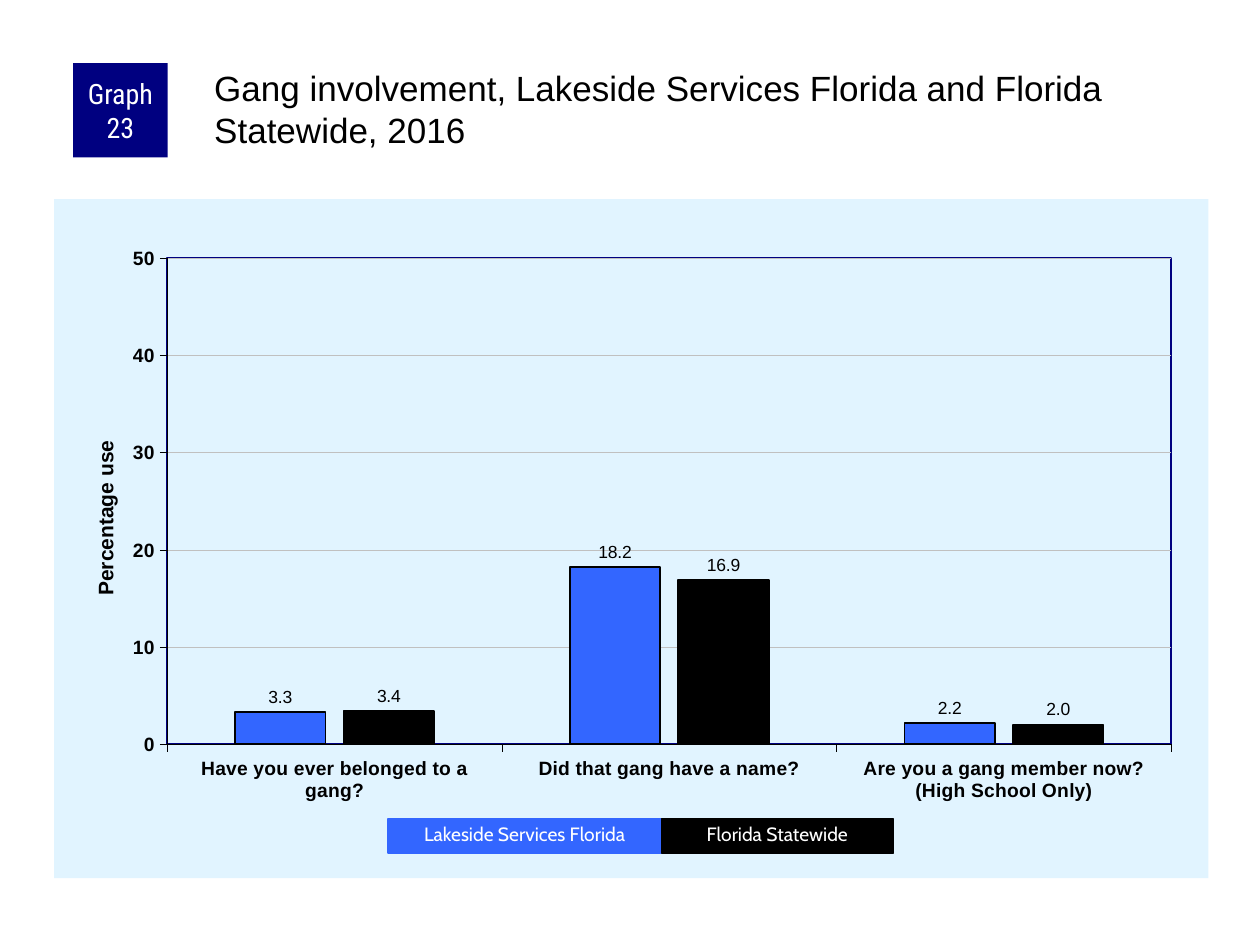
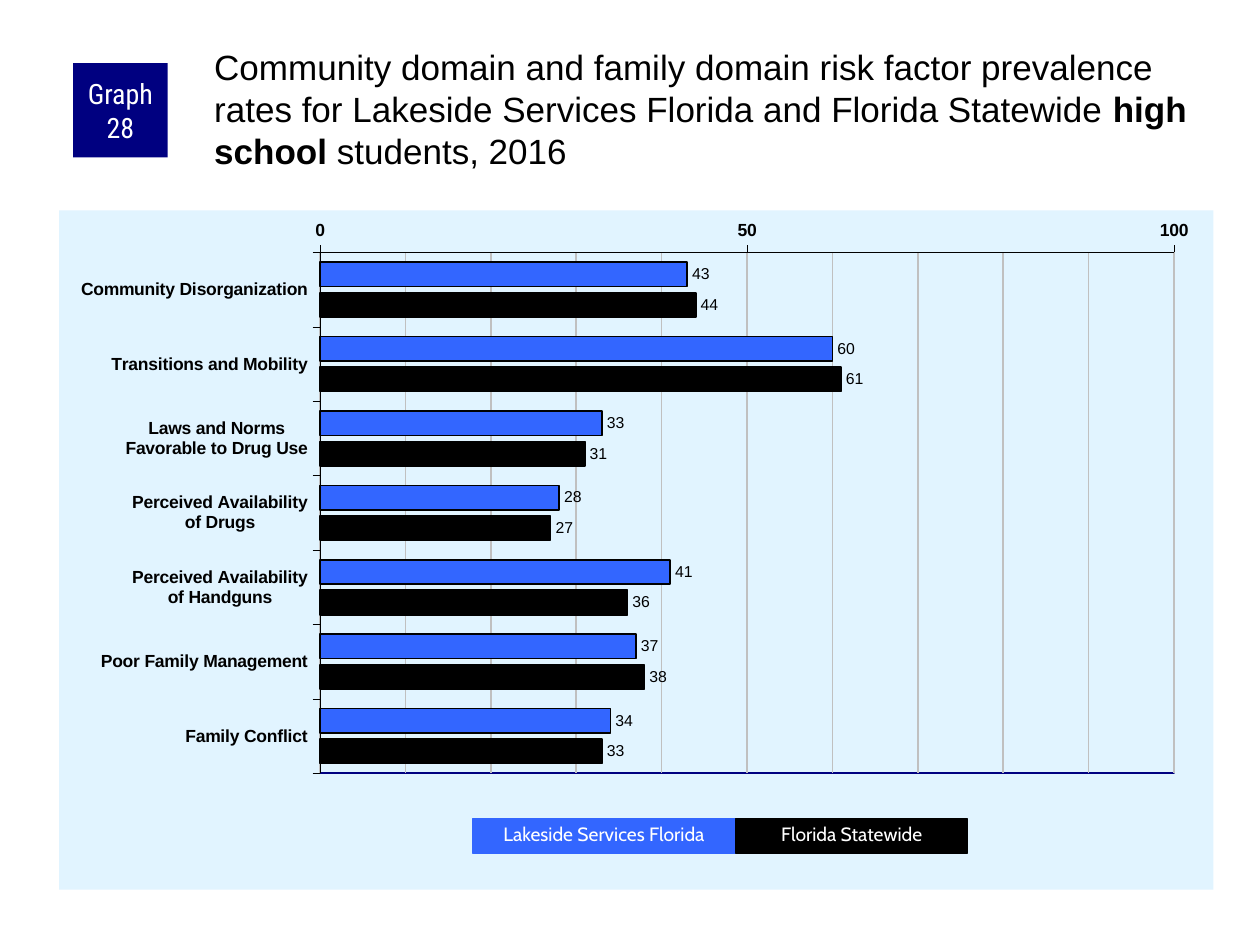
from pptx import Presentation
from pptx.chart.data import CategoryChartData
from pptx.dml.color import RGBColor
from pptx.enum.chart import XL_AXIS_CROSSES, XL_CHART_TYPE, XL_LABEL_POSITION, XL_TICK_MARK
from pptx.enum.shapes import MSO_SHAPE
from pptx.enum.text import MSO_ANCHOR, MSO_AUTO_SIZE, PP_ALIGN
from pptx.oxml import parse_xml
from pptx.oxml.ns import nsdecls, qn
from pptx.util import Inches, Pt

COLUMNS, BARS = XL_CHART_TYPE.COLUMN_CLUSTERED, XL_CHART_TYPE.BAR_CLUSTERED
OUTSIDE, MAXIMUM = XL_TICK_MARK.OUTSIDE, XL_AXIS_CROSSES.MAXIMUM
OUTSIDE_END = XL_LABEL_POSITION.OUTSIDE_END
RECTANGLE, CENTER = MSO_SHAPE.RECTANGLE, PP_ALIGN.CENTER
MIDDLE, TOP = MSO_ANCHOR.MIDDLE, MSO_ANCHOR.TOP
GROW, FIXED = MSO_AUTO_SIZE.SHAPE_TO_FIT_TEXT, MSO_AUTO_SIZE.NONE

COLORS = {"navy": "000080", "blue": "3366FF", "black": "000000",
          "white": "FFFFFF", "panel": "E1F4FF", "grid": "C0C0C0"}
REGIONS = [("Lakeside Services Florida", "blue"), ("Florida Statewide", "black")]
BADGE_FONT = {"name": "Roboto Condensed", "size": Pt(16), "bold": False}
TITLE_FONT = {"name": "Arial", "size": Pt(20)}
LEGEND_FONT = {"name": "Cabin", "size": Pt(11), "bold": False}


def rgb(color):
    return RGBColor.from_string(COLORS[color])


def set_all(target, values):
    for name, value in values.items():
        setattr(target, name, value)


def set_font(font, values, color="black"):
    set_all(font, values)
    font.color.rgb = rgb(color)


def set_line(line, color, width):
    line.color.rgb = rgb(color)
    line.width = Pt(width)


# Chart parts that need XML
def layout_xml(x, y, width=None, height=None):
    places = {"x": x, "y": y}
    target = ""
    if width:
        places.update(w=width, h=height)
        target = '<c:layoutTarget val="inner"/>'
    modes = '<c:xMode val="edge"/><c:yMode val="edge"/>'
    values = "".join(f'<c:{name} val="{value}"/>' for name, value in places.items())
    return parse_xml(f'<c:layout {nsdecls("c")}><c:manualLayout>{target}{modes}{values}'
                     '</c:manualLayout></c:layout>')


def area_xml(fill, line):
    return parse_xml(f'<c:spPr {nsdecls("c", "a")}>{fill}{line}</c:spPr>')


def solid(color):
    return f'<a:solidFill><a:srgbClr val="{COLORS[color]}"/></a:solidFill>'


def line_xml(color, width):
    return f'<a:ln w="{Pt(width)}">{solid(color)}</a:ln>'


def style_areas(chart, plot_place):
    frame = chart.element.find(qn("c:chart"))
    frame.addnext(area_xml(solid("panel"), "<a:ln><a:noFill/></a:ln>"))
    plot_area = frame.find(qn("c:plotArea"))
    for layout in plot_area.findall(qn("c:layout")):
        plot_area.remove(layout)
    plot_area.insert(0, layout_xml(*plot_place))
    plot_area.append(area_xml("<a:noFill/>", line_xml("navy", 1)))


def add_minor_gridlines(chart, color, width):
    chart.value_axis.has_minor_gridlines = True
    gridlines = chart.element.find(".//" + qn("c:valAx") + "/" + qn("c:minorGridlines"))
    gridlines.append(area_xml("", line_xml(color, width)))


def add_axis_title(axis, text, x, y):
    title = axis.axis_title
    title.text_frame.text = text
    span = title.text_frame.paragraphs[0].runs[0]
    set_font(span.font, {"name": "Arial", "size": Pt(12), "bold": True})
    body = title.element.find(".//" + qn("a:bodyPr"))
    body.set("rot", "-5400000")
    body.set("vert", "horz")
    for layout in title.element.findall(qn("c:layout")):
        title.element.remove(layout)
    title.element.find(qn("c:tx")).addnext(layout_xml(x, y))


def add_bars(page, kind, left, top, categories, values, plot_place, scale,
             spacing, axis_size, label_size, label_format):
    data = CategoryChartData()
    data.categories = categories
    for (region, _), numbers in zip(REGIONS, values):
        data.add_series(region, numbers)
    chart = page.shapes.add_chart(kind, Inches(left), Inches(top),
                                  Inches(9.16), Inches(5.39), data).chart
    set_all(chart, {"has_title": False, "has_legend": False})
    set_font(chart.font, {"name": "Arial", "size": Pt(11.5)})
    style_areas(chart, plot_place)

    for axis in (chart.category_axis, chart.value_axis):
        axis.major_tick_mark = OUTSIDE
        set_font(axis.tick_labels.font, {"name": "Arial", "size": Pt(axis_size), "bold": True})
        set_line(axis.format.line, "black", 0.25)
    set_all(chart.value_axis, scale)

    plot = chart.plots[0]
    set_all(plot, {**spacing, "vary_by_categories": False, "has_data_labels": True})
    labels = plot.data_labels
    set_all(labels, {"show_value": True, "number_format": label_format,
                     "number_format_is_linked": False, "position": OUTSIDE_END})
    set_font(labels.font, {"name": "Arial", "size": Pt(label_size)})
    for series, (_, color) in zip(plot.series, REGIONS):
        series.format.fill.solid()
        series.format.fill.fore_color.rgb = rgb(color)
        set_line(series.format.line, "black", 1)
    return chart


# Boxes around the chart
def add_box(page, place, text, color, font):
    box = page.shapes.add_shape(RECTANGLE, *map(Inches, place))
    box.shadow.inherit = False
    box.fill.solid()
    box.fill.fore_color.rgb = rgb(color)
    box.line.fill.background()
    box.text_frame.word_wrap = True
    para = box.text_frame.paragraphs[0]
    para.alignment = CENTER
    span = para.add_run()
    span.text = text
    set_font(span.font, font, "white")
    return box


def add_heading(page, number, title, top):
    badge = add_box(page, (0.58, 0.5, 0.75, 0.75), f"Graph {number}", "navy", BADGE_FONT)
    set_all(badge.text_frame, {"vertical_anchor": MIDDLE,
                               "margin_left": Inches(0.05), "margin_right": Inches(0.05),
                               "margin_top": 0, "margin_bottom": 0})
    box = page.shapes.add_textbox(Inches(1.67), Inches(top), Inches(7.92), Inches(0.83))
    set_all(box.text_frame, {"word_wrap": True, "auto_size": FIXED,
                             "margin_left": Inches(0.03), "margin_top": Inches(0.03),
                             "margin_right": 0, "margin_bottom": 0})
    para = box.text_frame.paragraphs[0]
    para.line_spacing = Pt(24)
    for text, bold in title:
        span = para.add_run()
        span.text = text
        set_font(span.font, {**TITLE_FONT, "bold": bold})


def add_legend(page, left, widths):
    for (region, color), width in zip(REGIONS, widths):
        key = add_box(page, (left, 6.5, width, 0.27), region, color, LEGEND_FONT)
        set_line(key.line, color, 0.75)
        set_all(key.text_frame, {"vertical_anchor": TOP, "auto_size": GROW})
        key.text_frame.paragraphs[0].line_spacing = 0.9
        left += width


def add_gang_page(page):
    chart = add_bars(
        page, COLUMNS, 0.43, 1.58,
        ["Have you ever belonged to a gang?", "Did that gang have a name?",
         "Are you a gang member now?\n(High School Only)"],
        [(3.3, 18.2, 2.2), (3.4, 16.9, 2.0)],
        plot_place=(0.098, 0.087, 0.87, 0.716),
        scale={"minimum_scale": 0, "maximum_scale": 50, "major_unit": 10},
        spacing={"gap_width": 150, "overlap": -20},
        axis_size=11, label_size=10, label_format="0.0")
    set_line(chart.value_axis.major_gridlines.format.line, "grid", 0.25)
    add_axis_title(chart.value_axis, "Percentage use", 0.03, 0.35)
    add_heading(page, 23, [("Gang involvement, Lakeside Services Florida and "
                            "Florida Statewide, 2016", False)], 0.5)
    add_legend(page, 3.08, (2.17, 1.84))


def add_risk_page(page):
    chart = add_bars(
        page, BARS, 0.47, 1.67,
        ["Community Disorganization", "Transitions and Mobility",
         "Laws and Norms\nFavorable to Drug Use", "Perceived Availability\nof Drugs",
         "Perceived Availability\nof Handguns", "Poor Family Management", "Family Conflict"],
        [(43, 60, 33, 28, 41, 37, 34), (44, 61, 31, 27, 36, 38, 33)],
        plot_place=(0.226, 0.062, 0.74, 0.767),
        scale={"minimum_scale": 0, "maximum_scale": 100, "major_unit": 50, "minor_unit": 10},
        spacing={"gap_width": 80, "overlap": -25},
        axis_size=10, label_size=9, label_format="General")
    # First category on top, values along the bottom
    set_all(chart.category_axis, {"reverse_order": True, "crosses": MAXIMUM})
    set_line(chart.value_axis.major_gridlines.format.line, "grid", 1)
    add_minor_gridlines(chart, "grid", 1)
    add_heading(page, 28, [
        ("Community domain and family domain risk factor prevalence rates for "
         "Lakeside Services Florida and Florida Statewide ", False),
        ("high school", True), (" students, 2016", False)], 0.33)
    add_legend(page, 3.75, (2.09, 1.84))


def main():
    deck = Presentation()
    deck.slide_width, deck.slide_height = Inches(10), Inches(7.5)
    for add_content in (add_gang_page, add_risk_page):
        add_content(deck.slides.add_slide(deck.slide_layouts[6]))
    deck.save("out.pptx")


if __name__ == "__main__":
    main()
